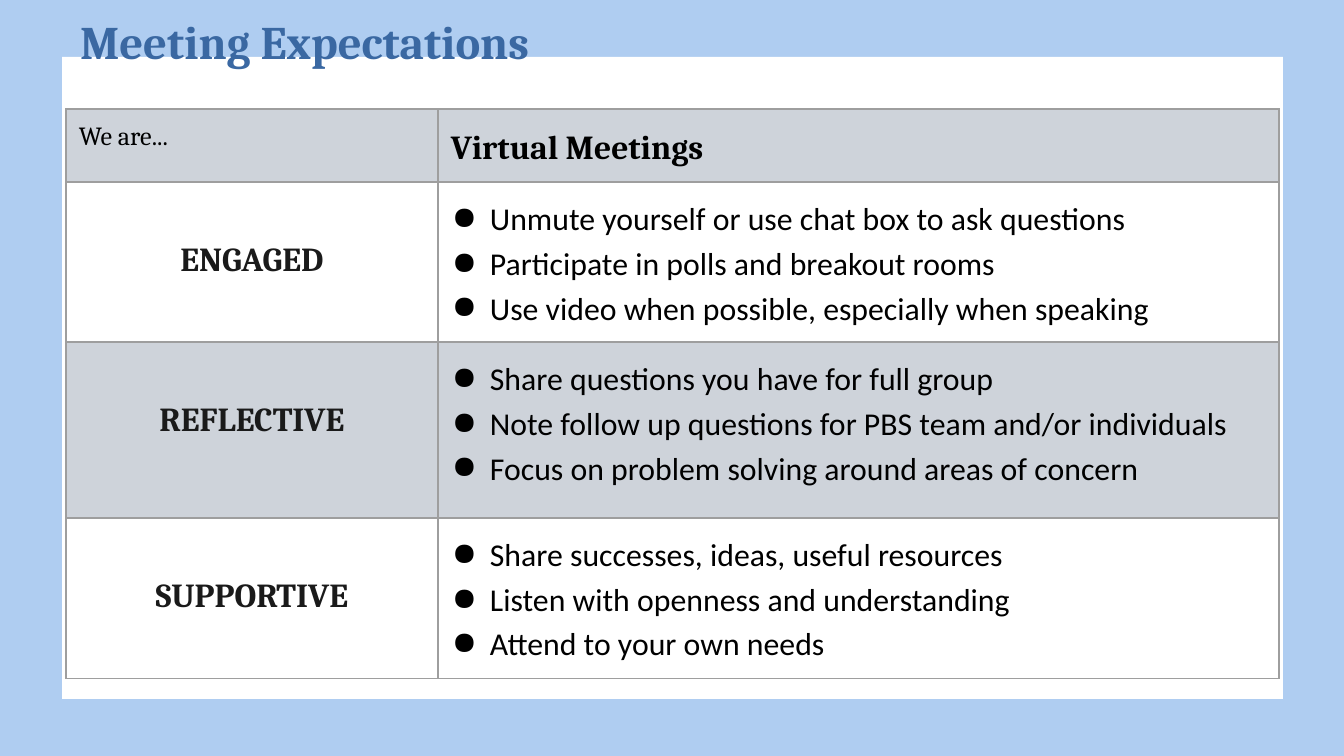
from dataclasses import dataclass

from lxml.etree import SubElement
from pptx import Presentation
from pptx.dml.color import RGBColor
from pptx.enum.shapes import MSO_SHAPE as Shape
from pptx.enum.text import PP_ALIGN as Align
from pptx.oxml.ns import qn
from pptx.util import Emu, Pt

EMU_PER_PX = 9144000 / 1344


@dataclass(frozen=True)
class Theme:
    background: str = "AFCDF1"
    panel: str = "FFFFFF"
    band: str = "CED3DA"
    border: str = "9E9E9E"
    title: str = "3A68A2"
    label: str = "1A1A1A"
    text: str = "000000"
    heading_font: str = "Cambria"
    body_font: str = "Calibri"
    title_size: int = 25
    heading_size: int = 18
    body_size: int = 17
    intro_size: int = 14
    border_width: float = 0.75


@dataclass(frozen=True)
class TextStyle:
    size: int
    color: str
    font: str
    bold: bool = False
    align: Align = Align.LEFT
    spacing: float = 1.0
    bullet: str = ""


@dataclass(frozen=True)
class Expectation:
    label: str
    actions: tuple[str, ...]
    height: int
    fill: str | None = None


T = Theme()
TITLE = TextStyle(T.title_size, T.title, T.heading_font, bold=True)
INTRO = TextStyle(T.intro_size, T.text, T.heading_font)
HEADING = TextStyle(T.heading_size, T.text, T.heading_font, bold=True, spacing=1.2)
LABEL = TextStyle(T.heading_size, T.label, T.heading_font, True, Align.CENTER, 1.2)
ACTION = TextStyle(T.body_size, T.text, T.body_font, spacing=1.15, bullet="●")

INSET = 13
LABEL_TOP = 52
BULLET_LEFT, BULLET_HANG = 39, 38
COLUMNS = (372, 841)
HEADER_HEIGHT = 73

EXPECTATIONS = (
    Expectation("ENGAGED", (
        "Unmute yourself or use chat box to ask questions",
        "Participate in polls and breakout rooms",
        "Use video when possible, especially when speaking",
    ), 160),
    Expectation("REFLECTIVE", (
        "Share questions you have for full group",
        "Note follow up questions for PBS team and/or individuals",
        "Focus on problem solving around areas of concern",
    ), 176, T.band),
    Expectation("SUPPORTIVE", (
        "Share successes, ideas, useful resources",
        "Listen with openness and understanding",
        "Attend to your own needs",
    ), 161),
)


def px(n: int) -> Emu:
    return Emu(round(n * EMU_PER_PX))


def rgb(color: str) -> RGBColor:
    return RGBColor.from_string(color)


def set_margins(box, top: int = INSET) -> None:
    """Set the insets of a text frame or a table cell."""
    box.margin_left = box.margin_right = box.margin_bottom = px(INSET)
    box.margin_top = px(top)


def add_bullet(p, char: str, color: str) -> None:
    pPr = p._p.get_or_add_pPr()
    pPr.set("marL", str(px(BULLET_LEFT)))
    pPr.set("indent", str(-px(BULLET_HANG)))
    SubElement(SubElement(pPr, qn("a:buClr")), qn("a:srgbClr"), val=color)
    SubElement(pPr, qn("a:buChar"), char=char)


def write(tf, lines: tuple[str, ...], style: TextStyle) -> None:
    """Write one paragraph per line into a text frame."""
    for i, line in enumerate(lines):
        p = tf.add_paragraph() if i else tf.paragraphs[0]
        p.alignment = style.align
        p.line_spacing = style.spacing
        if style.bullet:
            add_bullet(p, style.bullet, style.color)
        r = p.add_run()
        r.text = line
        r.font.name = style.font
        r.font.size = Pt(style.size)
        r.font.bold = style.bold
        r.font.color.rgb = rgb(style.color)


def add_borders(cell) -> None:
    tcPr = cell._tc.get_or_add_tcPr()
    for side in ("lnL", "lnR", "lnT", "lnB"):
        ln = SubElement(tcPr, qn(f"a:{side}"), w=str(Pt(T.border_width)))
        SubElement(SubElement(ln, qn("a:solidFill")), qn("a:srgbClr"), val=T.border)


def fill_cell(cell, lines: tuple[str, ...], style: TextStyle,
              fill: str | None, top: int = INSET) -> None:
    add_borders(cell)
    if fill:
        cell.fill.solid()
        cell.fill.fore_color.rgb = rgb(fill)
    else:
        cell.fill.background()
    set_margins(cell, top)
    write(cell.text_frame, lines, style)


def add_panel(slide) -> None:
    sp = slide.shapes.add_shape(Shape.RECTANGLE, px(62), px(57), px(1221), px(642))
    sp.shadow.inherit = False
    sp.fill.solid()
    sp.fill.fore_color.rgb = rgb(T.panel)
    sp.line.fill.background()


def add_expectations(slide) -> None:
    heights = (HEADER_HEIGHT, *(e.height for e in EXPECTATIONS))
    table = slide.shapes.add_table(
        len(heights), len(COLUMNS), px(66), px(109), px(sum(COLUMNS)), px(sum(heights))
    ).table
    table.first_row = table.horz_banding = False
    for column, width in zip(table.columns, COLUMNS):
        column.width = px(width)
    for row, height in zip(table.rows, heights):
        row.height = px(height)

    fill_cell(table.cell(0, 0), ("We are...",), INTRO, T.band)
    fill_cell(table.cell(0, 1), ("Virtual Meetings",), HEADING, T.band)
    for i, e in enumerate(EXPECTATIONS, start=1):
        fill_cell(table.cell(i, 0), (e.label,), LABEL, e.fill, LABEL_TOP)
        fill_cell(table.cell(i, 1), e.actions, ACTION, e.fill)


def add_title(slide) -> None:
    tf = slide.shapes.add_textbox(px(67), px(0), px(973), px(89)).text_frame
    tf.word_wrap = True
    set_margins(tf)
    write(tf, ("Meeting Expectations",), TITLE)


def main() -> None:
    prs = Presentation()
    prs.slide_width, prs.slide_height = px(1344), px(756)
    slide = prs.slides.add_slide(prs.slide_layouts[6])
    slide.background.fill.solid()
    slide.background.fill.fore_color.rgb = rgb(T.background)
    add_panel(slide)
    add_expectations(slide)
    add_title(slide)
    prs.save("out.pptx")


if __name__ == "__main__":
    main()
